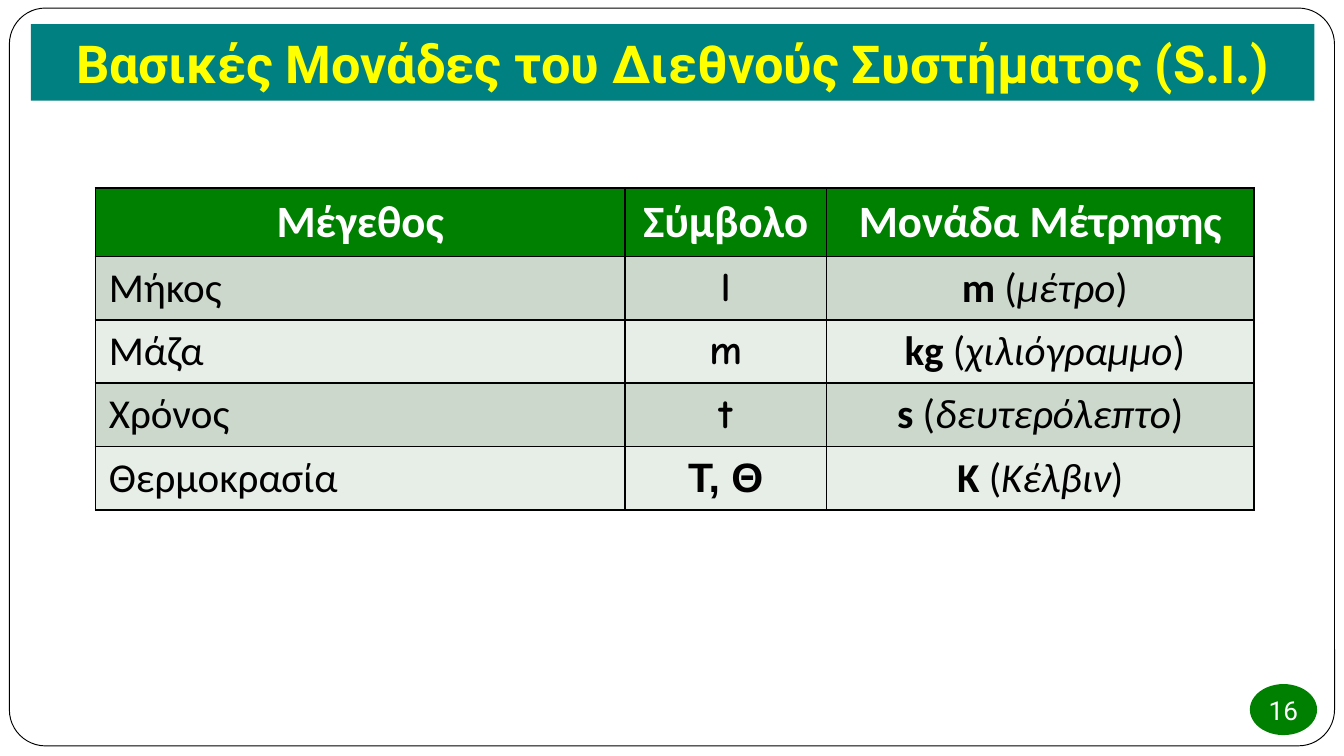
from lxml import etree
from pptx import Presentation
from pptx.dml.color import RGBColor
from pptx.enum import shapes, text
from pptx.oxml.ns import qn
from pptx.util import Inches, Pt

# Content
TITLE = "Βασικές Μονάδες του Διεθνούς Συστήματος (S.I.)"
NUMBER = "16"
HEADS = ["Μέγεθος", "Σύμβολο", "Μονάδα Μέτρησης"]
# quantity, symbol, symbol font, unit, unit name
UNITS = [
    ("Μήκος", "l", "Comic Neue", " m", "μέτρο"),
    ("Μάζα", "m", "Comic Neue", " kg", "χιλιόγραμμο"),
    ("Χρόνος", "t", "Comic Neue", "s", "δευτερόλεπτο"),
    ("Θερμοκρασία", "T, Θ", "Arial", "K", "Κέλβιν"),
]
COLS = [3.94, 1.5, 3.18]
HEAD, ROW = 0.47, 0.44
WIDE = 10
COLORS = {"white": "FFFFFF", "black": "000000", "green": "008000",
          "teal": "008080", "yellow": "FFFF00",
          "dark": "CCD8CC", "light": "E7EDE7"}
CENTER, LEFT = text.PP_ALIGN.CENTER, text.PP_ALIGN.LEFT
MIDDLE = text.MSO_ANCHOR.MIDDLE


def color(name):
    return RGBColor.from_string(COLORS[name])


def paint(item, name):
    item.fill.solid()
    item.fill.fore_color.rgb = color(name)


def place(shape, *box):
    shape.left, shape.top, shape.width, shape.height = map(Inches, box)


def write(para, parts, size, tint, align=CENTER):
    """Each part is (text, font, bold, italic)."""
    para.alignment = align
    for words, face, bold, italic in parts:
        run = para.add_run()
        run.text = words
        font = run.font
        font.name, font.size = face, Pt(size)
        font.bold, font.italic = bold, italic
        font.color.rgb = color(tint)


def border(cell):
    props = cell._tc.get_or_add_tcPr()
    for i, side in enumerate(["lnL", "lnR", "lnT", "lnB"]):
        line = etree.Element(qn("a:" + side), w=str(Pt(1)))
        fill = etree.SubElement(line, qn("a:solidFill"))
        etree.SubElement(fill, qn("a:srgbClr"), val=COLORS["black"])
        props.insert(i, line)


def fill_cell(cell, parts, size, tint, back, align=CENTER):
    cell.vertical_anchor = MIDDLE
    write(cell.text_frame.paragraphs[0], parts, size, tint, align)
    paint(cell, back)
    border(cell)


# A 16:9 slide
deck = Presentation()
deck.slide_width, deck.slide_height = Inches(WIDE), Inches(WIDE * 9 / 16)
slide = deck.slides.add_slide(deck.slide_layouts[5])
tree = slide.shapes

# Frame, behind the title
frame = tree.add_shape(shapes.MSO_SHAPE.ROUNDED_RECTANGLE, 0, 0, 0, 0)
place(frame, 0.07, 0.06, 9.86, 5.49)
frame.adjustments[0] = 0.049
frame.shadow.inherit = False
paint(frame, "white")
frame.line.color.rgb = color("black")
frame.line.width = Pt(0.5)
tree.title._element.addprevious(frame._element)

# Page number
badge = tree.add_shape(shapes.MSO_SHAPE.OVAL, 0, 0, 0, 0)
place(badge, 9.3, 5.09, 0.5, 0.38)
badge.shadow.inherit = False
paint(badge, "green")
badge.line.fill.background()
body = badge.text_frame
body.margin_left = body.margin_right = body.margin_top = body.margin_bottom = 0
body.word_wrap = False
body.vertical_anchor = MIDDLE
write(body.paragraphs[0], [(NUMBER, "Roboto", False, False)], 14, "white")

# Title bar
title = tree.title
place(title, 0.23, 0.18, 9.55, 0.57)
paint(title, "teal")
title.text_frame.auto_size = text.MSO_AUTO_SIZE.NONE
title.text_frame.word_wrap = True
title.text_frame.vertical_anchor = MIDDLE
write(title.text_frame.paragraphs[0], [(TITLE, "Roboto", True, False)],
      28, "yellow")

# Table of units; rows grow to fit their text
high = HEAD + ROW * len(UNITS)
table = tree.add_table(len(UNITS) + 1, len(COLS), Inches(0.71), Inches(1.4),
                       Inches(sum(COLS)), Inches(high)).table
for col, wide in zip(table.columns, COLS):
    col.width = Inches(wide)
for i, row in enumerate(table.rows):
    row.height = Inches(ROW if i else HEAD)

for j, head in enumerate(HEADS):
    fill_cell(table.cell(0, j), [(head, "Calibri", True, False)],
              24, "white", "green")
for i, (name, sign, face, unit, word) in enumerate(UNITS, 1):
    back = "dark" if i % 2 else "light"
    cells = [
        ([(name, "Calibri", False, False)], LEFT),
        ([(sign, face, True, False)], CENTER),
        ([(unit, "Calibri", True, False), (" (", "Calibri", False, False),
          (word, "Calibri", False, True), (")", "Calibri", False, False)],
         CENTER),
    ]
    for j, (parts, align) in enumerate(cells):
        fill_cell(table.cell(i, j), parts, 22, "black", back, align)

deck.save("out.pptx")
